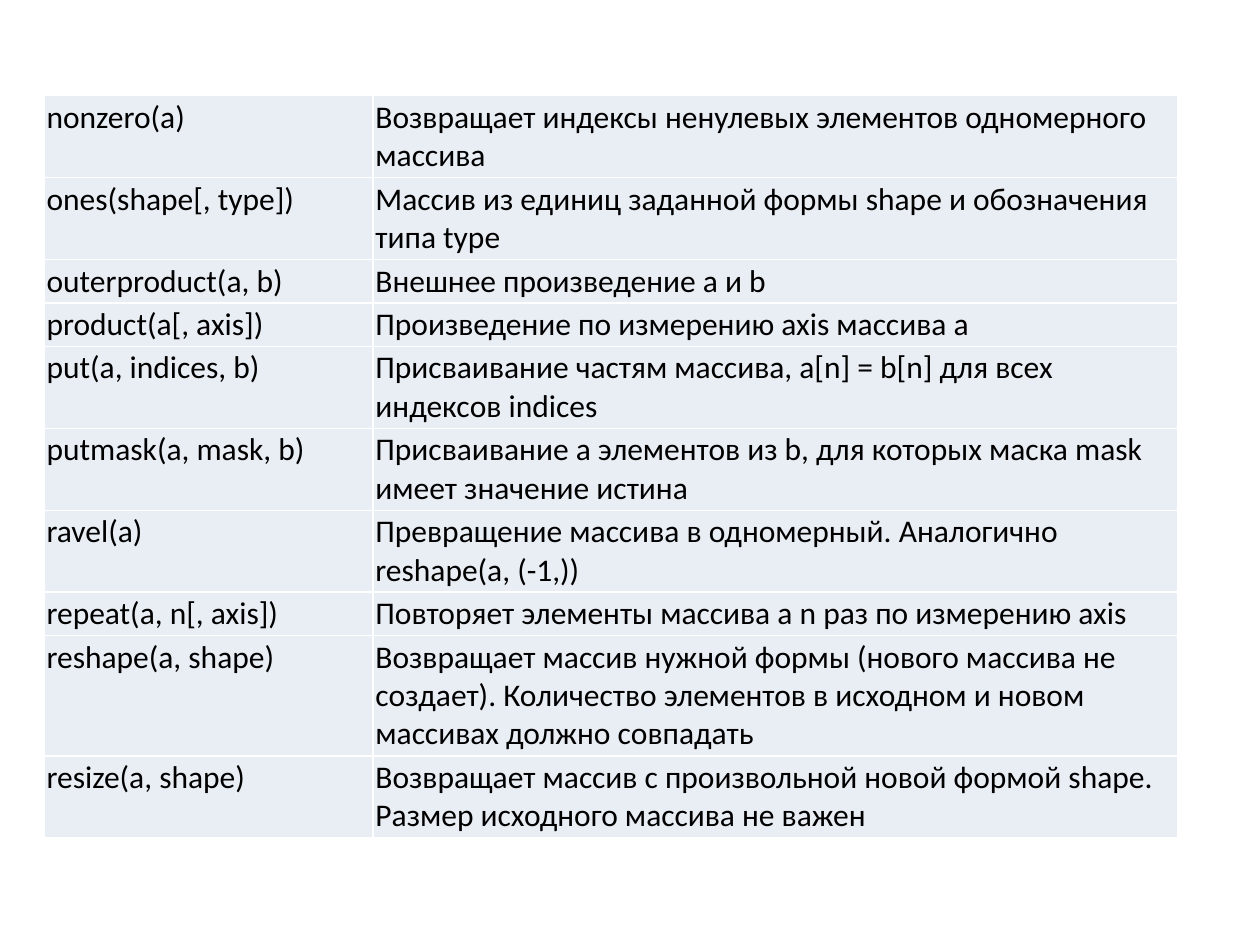
import pptx
import pptx.util
import pptx.dml.color
import pptx.oxml
import pptx.oxml.ns

# Content: function, description, lines of text in the row
FUNCTIONS = [
    ("nonzero(a)", "Возвращает индексы ненулевых элементов одномерного массива", 2),
    ("ones(shape[, type])", "Массив из единиц заданной формы shape и обозначения типа type", 2),
    ("outerproduct(a, b)", "Внешнее произведение a и b", 1),
    ("product(a[, axis])", "Произведение по измерению axis массива a", 1),
    ("put(a, indices, b)", "Присваивание частям массива, a[n] = b[n] для всех индексов indices", 2),
    ("putmask(a, mask, b)", "Присваивание a элементов из b, для которых маска mask имеет значение истина", 2),
    ("ravel(a)", "Превращение массива в одномерный. Аналогично reshape(a, (-1,))", 2),
    ("repeat(a, n[, axis])", "Повторяет элементы массива a n раз по измерению axis", 1),
    ("reshape(a, shape)", "Возвращает массив нужной формы (нового массива не создает). "
     "Количество элементов в исходном и новом массивах должно совпадать", 3),
    ("resize(a, shape)", "Возвращает массив с произвольной новой формой shape. "
     "Размер исходного массива не важен", 2),
]

# Layout in inches
LEFT, TOP, WIDTH = 0.35, 0.76, 9
COLUMN_SHARES = (0.29, 0.71)
LINE_HEIGHT = 0.3
INSET = 0.02
Inches = pptx.util.Inches


def color(value):
    return pptx.dml.color.RGBColor.from_string(value)


def add_borders(cell, value):
    properties = cell._tc.get_or_add_tcPr()
    for position, side in enumerate(("lnL", "lnR", "lnT", "lnB")):
        properties.insert(position, pptx.oxml.parse_xml(
            f'<a:{side} {pptx.oxml.ns.nsdecls("a")} w="12700"><a:solidFill>'
            f'<a:srgbClr val="{value}"/></a:solidFill></a:{side}>'))


def format_cell(cell, text):
    cell.text = text
    cell.margin_left = cell.margin_right = Inches(INSET)
    cell.margin_top = cell.margin_bottom = Inches(INSET)
    cell.fill.solid()
    cell.fill.fore_color.rgb = color("E9EDF4")
    add_borders(cell, "FFFFFF")
    font = cell.text_frame.paragraphs[0].font
    font.name = "Calibri"
    font.size = pptx.util.Pt(18)
    font.bold = False
    font.color.rgb = color("000000")


def main():
    deck = pptx.Presentation()
    deck.slide_width, deck.slide_height = Inches(10), Inches(7.5)
    page = deck.slides.add_slide(deck.slide_layouts[6])

    # Function table, each row as tall as its lines
    heights = [lines * LINE_HEIGHT + 2 * INSET for _, _, lines in FUNCTIONS]
    table = page.shapes.add_table(
        len(FUNCTIONS), len(COLUMN_SHARES), Inches(LEFT), Inches(TOP),
        Inches(WIDTH), Inches(sum(heights))).table
    table.first_row = table.horz_banding = False
    for column, share in zip(table.columns, COLUMN_SHARES):
        column.width = Inches(WIDTH * share)
    for row, height, (name, description, _) in zip(table.rows, heights, FUNCTIONS):
        row.height = Inches(height)
        for cell, text in zip(row.cells, (name, description)):
            format_cell(cell, text)

    deck.save("out.pptx")


if __name__ == "__main__":
    main()
